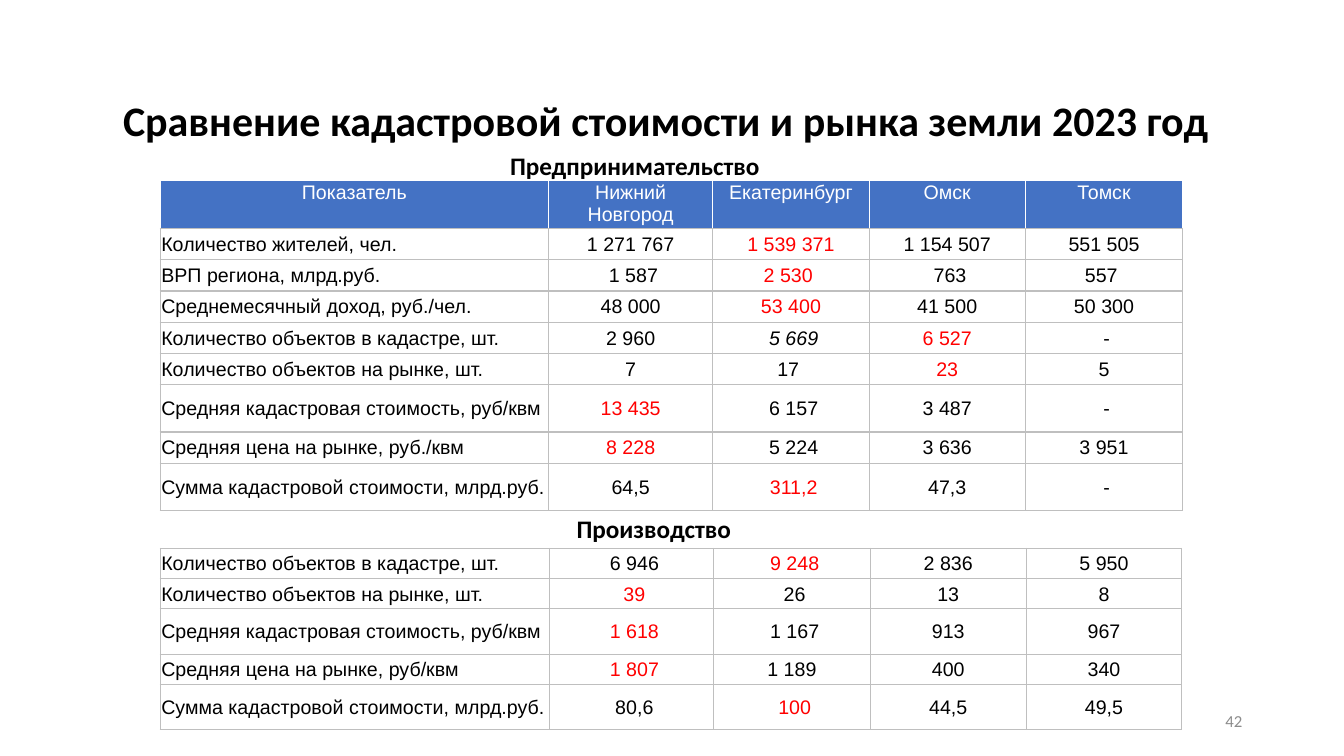
from dataclasses import dataclass

from pptx import Presentation
from pptx import util as u
from pptx.dml.color import RGBColor
from pptx.enum import text
from pptx.oxml import parse_xml
from pptx.oxml.ns import nsdecls


@dataclass(frozen=True)
class Theme:
    heading_font: str = "Calibri"
    table_font: str = "Arial"
    ink: str = "000000"
    paper: str = "FFFFFF"
    accent: str = "FF0000"
    header: str = "4472C4"
    grid: str = "BFBFBF"
    muted: str = "8C8C8C"
    title_size: int = 30
    heading_size: int = 18
    table_size: int = 14
    number_size: int = 12


LEFT, CENTER, RIGHT = text.PP_ALIGN.LEFT, text.PP_ALIGN.CENTER, text.PP_ALIGN.RIGHT
TOP, MIDDLE, BOTTOM = text.MSO_ANCHOR.TOP, text.MSO_ANCHOR.MIDDLE, text.MSO_ANCHOR.BOTTOM

# "*" starts highlighted text, a leading "_" makes a value italic
BUSINESS = [
    ("Показатель", "Нижний Новгород", "Екатеринбург", "Омск", "Томск"),
    ("Количество жителей, чел.", "1 271 767", "*1 539 371", "1 154 507", "551 505"),
    ("ВРП региона, млрд.руб.", " 1 587", "*2 530 ", " 763", "557 "),
    ("Среднемесячный доход, руб./чел.", "48 000", "*53 400", "41 500", "50 300"),
    ("Количество объектов в кадастре, шт.", "2 960", "_ 5 669", "*6 527", " -"),
    ("Количество объектов на рынке, шт.", "7", "17 ", "*23", "5"),
    ("Средняя кадастровая стоимость, руб/квм", "*13 435", " 6 157", "3 487", " -"),
    ("Средняя цена на рынке, руб./квм", "*8 228", " 5 224", "3 636", "3 951"),
    ("Сумма кадастровой стоимости, млрд.руб.", "64,5", " *311,2", "47,3", " -"),
]
INDUSTRY = [
    ("Количество объектов в кадастре, шт.", " 6 946", "* 9 248", "2 836", "5 950"),
    ("Количество объектов на рынке, шт.", "* 39", " 26", "13", "8"),
    ("Средняя кадастровая стоимость, руб/квм", " *1 618", " 1 167", "913", "967"),
    ("Средняя цена на рынке, руб/квм", "* 1 807", "1 189", "400", "340"),
    ("Сумма кадастровой стоимости, млрд.руб.", " 80,6", "* 100", "44,5", "49,5"),
]


class Deck:
    def __init__(self, theme):
        self.theme = theme
        self.prs = Presentation()
        self.prs.slide_width, self.prs.slide_height = u.Inches(13.33), u.Inches(7.5)
        self.s = self.prs.slides.add_slide(self.prs.slide_layouts[6])

    def run(self, p, words, font, size, color, bold=False, italic=False):
        r = p.add_run()
        r.text = words
        r.font.name, r.font.size = font, u.Pt(size)
        r.font.bold, r.font.italic = bold, italic
        r.font.color.rgb = RGBColor.from_string(color)

    def label(self, box, words, size, color=None, bold=True, align=LEFT, anchor=TOP, wrap=True):
        tf = self.s.shapes.add_textbox(*map(u.Inches, box)).text_frame
        tf.word_wrap, tf.vertical_anchor = wrap, anchor
        p = tf.paragraphs[0]
        p.alignment = align
        self.run(p, words, self.theme.heading_font, size, color or self.theme.ink, bold)
        return p

    def table(self, left, top, widths, heights, rows, has_header=False):
        box = (left, top, sum(widths), sum(heights))
        table = self.s.shapes.add_table(len(rows), len(widths), *map(u.Inches, box)).table
        table.first_row, table.horz_banding = has_header, False
        for column, width in zip(table.columns, widths):
            column.width = u.Inches(width)
        for i, (row, height) in enumerate(zip(rows, heights)):
            table.rows[i].height = u.Inches(height)
            for j, words in enumerate(row):
                self.cell(table.cell(i, j), words, j == 0, has_header and i == 0)

    def cell(self, cell, words, is_name, is_header):
        t = self.theme
        cell.margin_left = cell.margin_right = cell.margin_top = u.Inches(0.01)
        cell.margin_bottom = 0
        cell.vertical_anchor = TOP if is_header else MIDDLE
        cell.fill.solid()
        cell.fill.fore_color.rgb = RGBColor.from_string(t.header if is_header else t.paper)
        self.borders(cell, is_header)
        p = cell.text_frame.paragraphs[0]
        p.alignment = LEFT if is_name and not is_header else CENTER
        italic = words.startswith("_")
        plain, _, marked = words.removeprefix("_").partition("*")
        for part, color in ((plain, t.paper if is_header else t.ink), (marked, t.accent)):
            if part:
                self.run(p, part, t.table_font, t.table_size, color, italic=italic)

    def borders(self, cell, is_header):
        tc_pr = cell._tc.get_or_add_tcPr()
        for i, side in enumerate("LRTB"):
            color = self.theme.paper if is_header and side != "B" else self.theme.grid
            tc_pr.insert(i, parse_xml(
                f'<a:ln{side} {nsdecls("a")} w="{u.Pt(1)}"><a:solidFill>'
                f'<a:srgbClr val="{color}"/></a:solidFill></a:ln{side}>'))


def main():
    theme = Theme()
    deck = Deck(theme)
    title = deck.label((0.78, 0.63, 11.75, 0.86),
                       "Сравнение кадастровой стоимости и рынка земли 2023 год ",
                       theme.title_size, align=CENTER, anchor=BOTTOM)
    title.line_spacing = 0.9
    deck.label((4.96, 1.44, 2.69, 0.4), "Предпринимательство", theme.heading_size)
    single, double = 0.31, 0.47
    deck.table(1.59, 1.79, (3.85, 1.63, 1.55, 1.55, 1.56),
               (double, *[single] * 5, double, single, double), BUSINESS, has_header=True)
    deck.label((5.62, 5.04, 1.74, 0.4), "Производство", theme.heading_size, wrap=False)
    single, double = 0.3, 0.45
    deck.table(1.59, 5.44, (3.86, 1.63, 1.55, 1.55, 1.54),
               (single, single, double, single, double), INDUSTRY)
    deck.label((9.42, 6.95, 3, 0.4), "42", theme.number_size, theme.muted,
               bold=False, align=RIGHT, anchor=MIDDLE)
    deck.prs.save("out.pptx")


if __name__ == "__main__":
    main()
